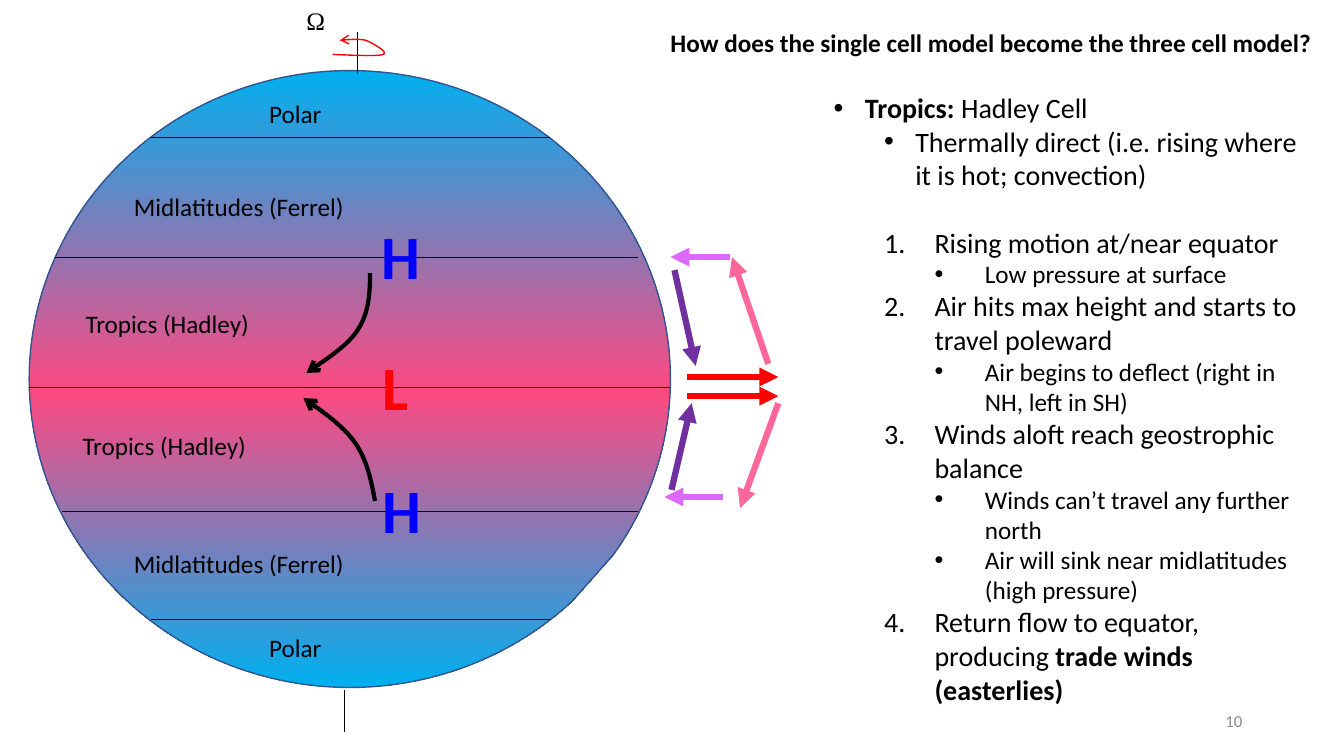
"""Build a slide on how the single cell circulation model becomes three cells."""
from copy import deepcopy

from lxml.etree import SubElement
from pptx import Presentation
from pptx.dml.color import RGBColor as RGB
from pptx.enum.shapes import MSO_CONNECTOR as CONN, MSO_SHAPE as SHAPE
from pptx.enum.text import MSO_ANCHOR as ANCHOR, MSO_AUTO_SIZE as FIT, PP_ALIGN as ALIGN
from pptx.oxml.ns import qn
from pptx.util import Inches, Pt

BLACK, GREY = RGB(0, 0, 0), RGB(0x8C, 0x8C, 0x8C)
RED, BLUE = RGB(0xFF, 0, 0), RGB(0, 0, 0xFF)
COLD, WARM, RIM = RGB(0, 0xB0, 0xF0), RGB(0xFD, 0x49, 0x81), RGB(0x32, 0x54, 0x91)
PINK, VIOLET, PURPLE = RGB(0xFF, 0x66, 0x99), RGB(0xDC, 0x68, 0xFC), RGB(0x70, 0x30, 0xA0)

COLS, ROWS = 13.33, 7.5
BODY = "Calibri"
TITLE = "How does the single cell model become the three cell model?"
TITLE_BOX = (6.55, 0.22, 6.79, 0.4)
NOTES_BOX = (8.17, 0.85, 4.88, 6.6)
GLOBE = (0.29, 0.7, 6.36, 6.12)

STYLES = {
    "head": (0, 0.31, -0.31, 20, "•"),
    "sub": (1, 0.81, -0.31, 20, "•"),
    "step": (1, 1, -0.5, 20, None),
    "detail": (2, 1.5, -0.5, 18, "•"),
}
NOTES = [
    ("head", "", "Tropics:", " Hadley Cell"),
    ("sub", "Thermally direct (i.e. rising where it is hot; convection)"),
    ("step", "Rising motion at/near equator"),
    ("detail", "Low pressure at surface"),
    ("step", "Air hits max height and starts to travel poleward"),
    ("detail", "Air begins to deflect (right in NH, left in SH)"),
    ("step", "Winds aloft reach geostrophic balance"),
    ("detail", "Winds can’t travel any further north"),
    ("detail", "Air will sink near midlatitudes (high pressure)"),
    ("step", "Return flow to equator, producing ", "trade winds (easterlies)"),
]
FIRST_STEP = 2

BANDS = [
    ("Polar", 2.57, 0.93, 2.68), ("Midlatitudes (Ferrel)", 1.23, 1.85, 2.68),
    ("Tropics (Hadley)", 0.75, 3.01, 2.19), ("Tropics (Hadley)", 0.72, 4.22, 2.19),
    ("Midlatitudes (Ferrel)", 1.23, 5.39, 2.68), ("Polar", 2.57, 6.22, 2.68),
]
LATITUDES = [(1.5, 5.46, 1.36), (0.55, 6.33, 2.55), (0.29, 6.65, 3.84),
             (0.62, 6.33, 5.07), (1.5, 5.46, 6.14)]
AXIS = [(3.54, 0.73, 0.32), (3.42, 7.26, 6.85)]
PRESSURE = [("H", 3.69, 2.11, BLUE), ("H", 3.7, 4.63, BLUE), ("L", 3.7, 3.41, RED)]
CELL_ARROWS = [
    ((6.81, 3.93), (7.72, 3.93), RED), ((6.81, 3.74), (7.72, 3.74), RED),
    ((7.62, 3.61), (7.26, 2.55), PINK), ((7.72, 4), (7.34, 5.04), PINK),
    ((7.24, 2.55), (6.65, 2.55), VIOLET), ((7.17, 4.93), (6.59, 4.93), VIOLET),
    ((6.69, 2.68), (6.9, 3.63), PURPLE), ((6.66, 4.86), (6.86, 4), PURPLE),
]
CURVES = [
    (RED, 1, [(3.3, 0.54), (3.52, 0.55), (3.75, 0.56), (3.8, 0.54), (3.86, 0.52),
              (3.7, 0.43), (3.63, 0.4), (3.55, 0.38), (3.37, 0.4), (3.37, 0.4)]),
    (BLACK, 3, [(3.67, 2.71), (3.67, 2.91), (3.66, 3.1), (3.55, 3.27),
                (3.45, 3.43), (3.24, 3.56), (3.04, 3.7)]),
    (BLACK, 3, [(3.72, 4.97), (3.68, 4.76), (3.64, 4.56), (3.52, 4.39),
                (3.4, 4.22), (3.21, 4.09), (3.01, 3.95)]),
]

prs = Presentation()
prs.slide_width, prs.slide_height = Inches(COLS), Inches(ROWS)
s = prs.slides.add_slide(prs.slide_layouts[5])


def grid(*cells):
    """Turn grid columns and rows, one inch each, into lengths."""
    return [Inches(c) for c in cells]


def style(r, size, color=BLACK, bold=False, font=BODY):
    """Format one run."""
    r.font.name, r.font.size, r.font.bold = font, Pt(size), bold
    r.font.color.rgb = color


def add_text(text, box, size=18, **look):
    """Add a text box holding one run."""
    sp = s.shapes.add_textbox(*grid(*box))
    tf = sp.text_frame
    tf.word_wrap, tf.auto_size = True, FIT.SHAPE_TO_FIT_TEXT
    tf.text = text
    style(tf.paragraphs[0].runs[0], size, **look)
    return tf


def set_line(sp, color, width, head=None):
    """Colour a line and give its end an arrowhead."""
    sp.line.color.rgb, sp.line.width = color, Pt(width)
    if head:
        SubElement(sp.line._get_or_add_ln(), qn("a:tailEnd"), type=head)


def add_line(start, end, color=BLACK, width=0.5, head=None):
    """Add a straight line or arrow."""
    sp = s.shapes.add_connector(CONN.STRAIGHT, *grid(*start, *end))
    set_line(sp, color, width, head)
    SubElement(sp._element.spPr, qn("a:effectLst"))


def bezier(points, steps=16):
    """Sample a chain of cubic curves."""
    for i in range(0, len(points) - 1, 3):
        for k in range(1, steps + 1):
            t = k / steps
            u = 1 - t
            weights = (u ** 3, 3 * u * u * t, 3 * u * t * t, t ** 3)
            yield grid(*(sum(w * p[axis] for w, p in zip(weights, points[i:i + 4]))
                         for axis in (0, 1)))


def add_curve(color, width, points):
    """Add a curved arrow."""
    fb = s.shapes.build_freeform(*grid(*points[0]))
    fb.add_line_segments(list(bezier(points)), close=False)
    sp = fb.convert_to_shape()
    sp.fill.background()
    sp.shadow.inherit = False
    set_line(sp, color, width, "arrow")


def add_globe():
    """Add the globe, cold at the poles and warm at the equator."""
    sp = s.shapes.add_shape(SHAPE.CHORD, *grid(*GLOBE))
    sp.adjustments[0], sp.adjustments[1] = 27, 20.32
    sp.shadow.inherit = False
    sp.fill.gradient()
    sp.fill.gradient_angle = 270
    first = sp._element.spPr.find(".//" + qn("a:gs"))
    first.addnext(deepcopy(first))
    for stop, color, place in zip(sp.fill.gradient_stops, (COLD, WARM, COLD), (0, 0.52, 1)):
        stop.color.rgb, stop.position = color, place
    set_line(sp, RIM, 1)


def add_notes():
    """Add the bulleted and numbered notes."""
    tf = s.shapes.add_textbox(*grid(*NOTES_BOX)).text_frame
    tf.word_wrap, tf.auto_size = True, FIT.SHAPE_TO_FIT_TEXT
    for i, (kind, *parts) in enumerate(NOTES):
        level, margin, indent, size, bullet = STYLES[kind]
        p = tf.add_paragraph() if i else tf.paragraphs[0]
        p.level = level
        if i == FIRST_STEP:
            p.space_before = Pt(24)
        pPr = p._p.get_or_add_pPr()
        pPr.set("marL", str(Inches(margin)))
        pPr.set("indent", str(Inches(indent)))
        if bullet:
            SubElement(pPr, qn("a:buFont"), typeface="Arial")
            SubElement(pPr, qn("a:buChar"), char=bullet)
        else:
            SubElement(pPr, qn("a:buAutoNum"), type="arabicPeriod")
        for n, part in enumerate(parts):
            if part:
                r = p.add_run()
                r.text = part
                style(r, size, bold=n == 1)


title = s.shapes.title
title.left, title.top, title.width, title.height = grid(*TITLE_BOX)
tf = title.text_frame
tf.text = TITLE
tf.word_wrap, tf.auto_size, tf.vertical_anchor = True, FIT.NONE, ANCHOR.TOP
tf.paragraphs[0].alignment = ALIGN.LEFT
style(tf.paragraphs[0].runs[0], 18, bold=True)

number = add_text("10", (9.42, 6.95, 3, 0.4), 12, color=GREY)
number.auto_size, number.vertical_anchor = FIT.NONE, ANCHOR.MIDDLE
number.paragraphs[0].alignment = ALIGN.RIGHT

add_globe()
add_notes()
add_text("Ω", (2.94, 0, 0.63, 0.4), font="Times New Roman")
for left, right, y in LATITUDES:
    add_line((left, y), (right, y))
for x, low, high in AXIS:
    add_line((x, low), (x, high))
for name, x, y, width in BANDS:
    add_text(name, (x, y, width, 0.4))
for start, end, color in CELL_ARROWS:
    add_line(start, end, color, 4.5, "triangle")
for curve in CURVES:
    add_curve(*curve)
for letter, x, y, color in PRESSURE:
    add_text(letter, (x, y, 0.61, 0.84), 44, color=color, bold=True)

prs.save("out.pptx")
